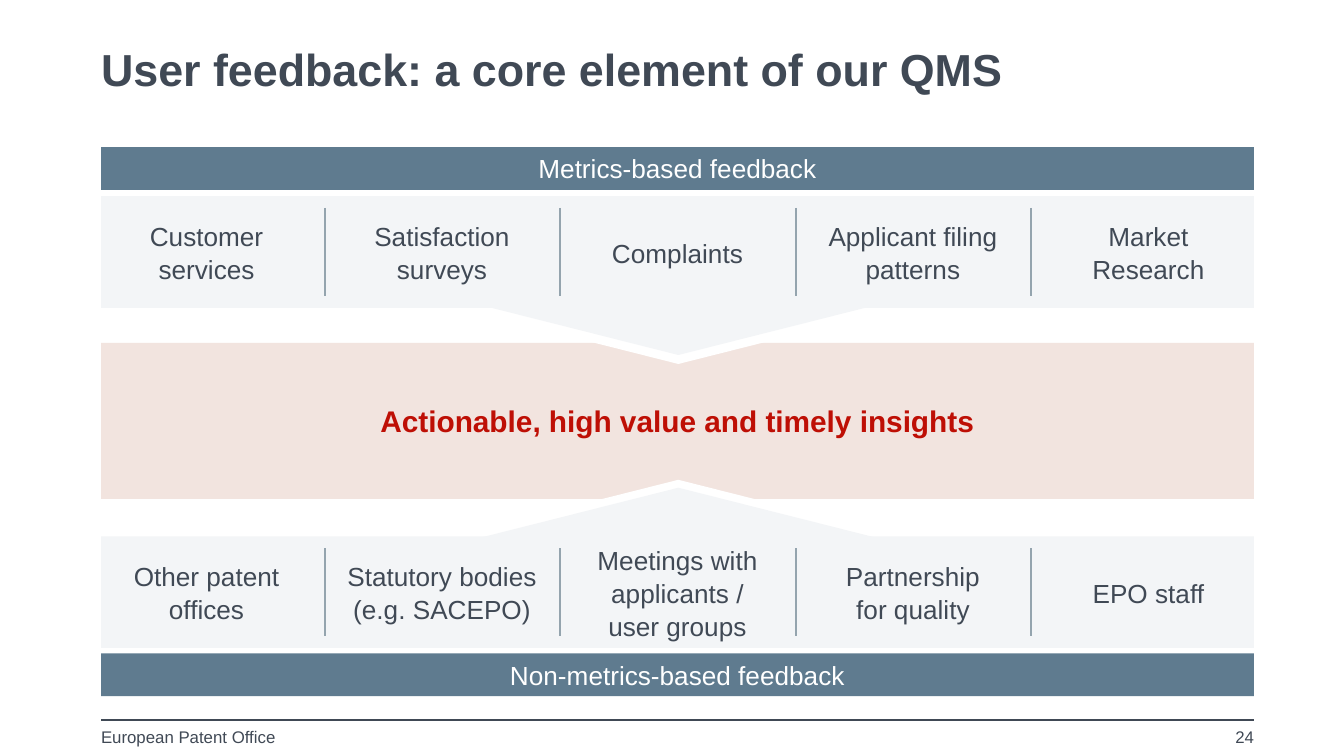
"""Build the user feedback slide with two feedback rows around a central band."""
import dataclasses

import lxml.etree
import pptx
import pptx.dml.color
import pptx.enum.shapes
import pptx.enum.text
import pptx.oxml.ns
import pptx.util

Cm = pptx.util.Cm
Kind = pptx.enum.shapes.MSO_SHAPE
Align = pptx.enum.text.PP_ALIGN
Anchor = pptx.enum.text.MSO_ANCHOR


@dataclasses.dataclass(frozen=True)
class Theme:
    font: str = "Arial"
    ink: str = "404955"
    white: str = "FFFFFF"
    pale: str = "F3F5F7"
    blush: str = "F2E4DF"
    red: str = "BE0F05"
    slate: str = "5F7B8F"
    rule: str = "94A4AE"
    title: int = 24
    lead: int = 16
    body: int = 14
    small: int = 9


class Painter:
    def __init__(self, slide, theme):
        self.slide = slide
        self.theme = theme

    def tint(self, color):
        return pptx.dml.color.RGBColor.from_string(color)

    def letter(self, shape, text, size, color, bold=False, align=Align.CENTER,
               anchor=Anchor.MIDDLE, inset=(0.15, 0.1), pitch=1.0):
        frame = shape.text_frame
        frame.word_wrap = True
        frame.vertical_anchor = anchor
        frame.margin_left = frame.margin_right = Cm(inset[0])
        frame.margin_top = frame.margin_bottom = Cm(inset[1])
        para = frame.paragraphs[0]
        para.alignment = align
        para.line_spacing = pitch
        for index, line in enumerate(text.split("\n")):
            if index:
                para.add_line_break()
            run = para.add_run()
            run.text = line
            run.font.name = self.theme.font
            run.font.size = pptx.util.Pt(size)
            run.font.bold = bold
            run.font.color.rgb = self.tint(color)

    def label(self, box, text, size, **style):
        shape = self.slide.shapes.add_textbox(*map(Cm, box))
        self.letter(shape, text, size, self.theme.ink, **style)

    def block(self, box, fill, kind=Kind.RECTANGLE, turn=0):
        shape = self.slide.shapes.add_shape(kind, *map(Cm, box))
        shape.shadow.inherit = False
        shape.fill.solid()
        shape.fill.fore_color.rgb = self.tint(fill)
        shape.line.fill.background()
        shape.rotation = turn
        return shape

    def band(self, box, fill, text, size, color, bold=False):
        self.letter(self.block(box, fill), text, size, color, bold)

    def line(self, start, end, color, width):
        link = self.slide.shapes.add_connector(
            pptx.enum.shapes.MSO_CONNECTOR.STRAIGHT, *map(Cm, start + end))
        link.line.color.rgb = self.tint(color)
        link.line.width = pptx.util.Pt(width)
        lxml.etree.SubElement(link._element.spPr, pptx.oxml.ns.qn("a:effectLst"))

    def row(self, top, names, outer, inner, turn):
        left, wide, high, step = 1.91, 21.79, 2.11, 4.45
        for place, fill in ((outer, self.theme.white), (inner, self.theme.pale)):
            self.block((8.9, place, 7.84, 0.99), fill, Kind.ISOSCELES_TRIANGLE, turn)
        self.block((left, top, wide, high), self.theme.pale)
        for index, name in enumerate(names):
            self.label((left + index * step, top, 3.99, high), name,
                       self.theme.body, pitch=1.05)
            if index:
                mark = left - 0.22 + index * step
                self.line((mark, top + 0.22), (mark, top + 1.89), self.theme.rule, 1)


def main():
    deck = pptx.Presentation()
    deck.slide_width, deck.slide_height = Cm(25.4), Cm(14.29)
    theme = Theme()
    paint = Painter(deck.slides.add_slide(deck.slide_layouts[6]), theme)
    left, wide = 1.91, 21.79

    paint.label((left, 0.74, wide, 1.12), "User feedback: a core element of our QMS",
                theme.title, bold=True, align=Align.LEFT, inset=(0, 0))
    paint.band((left, 6.48, wide, 2.95), theme.blush,
               "Actionable, high value and timely insights", theme.lead, theme.red, True)
    paint.row(3.71, ("Customer services", "Satisfaction surveys", "Complaints",
                     "Applicant filing patterns", "Market Research"), 5.89, 5.72, 180)
    paint.row(10.14, ("Other patent offices", "Statutory bodies\n(e.g. SACEPO)",
                      "Meetings with applicants /\nuser groups",
                      "Partnership\nfor quality", "EPO staff"), 9.07, 9.22, 0)
    for top, name in ((2.78, "Metrics-based feedback"),
                      (12.35, "Non-metrics-based feedback")):
        paint.band((left, top, wide, 0.81), theme.slate, name, theme.body, theme.white)

    paint.line((left, 13.61), (left + wide, 13.61), theme.ink, 0.75)
    for start, width, text, align in (
            (left, 4.32, "European Patent Office", Align.LEFT),
            (22.1, 1.6, "24", Align.RIGHT)):
        paint.label((start, 13.74, width, 0.48), text, theme.small, align=align,
                    anchor=Anchor.TOP, inset=(0, 0))
    deck.save("out.pptx")


if __name__ == "__main__":
    main()
